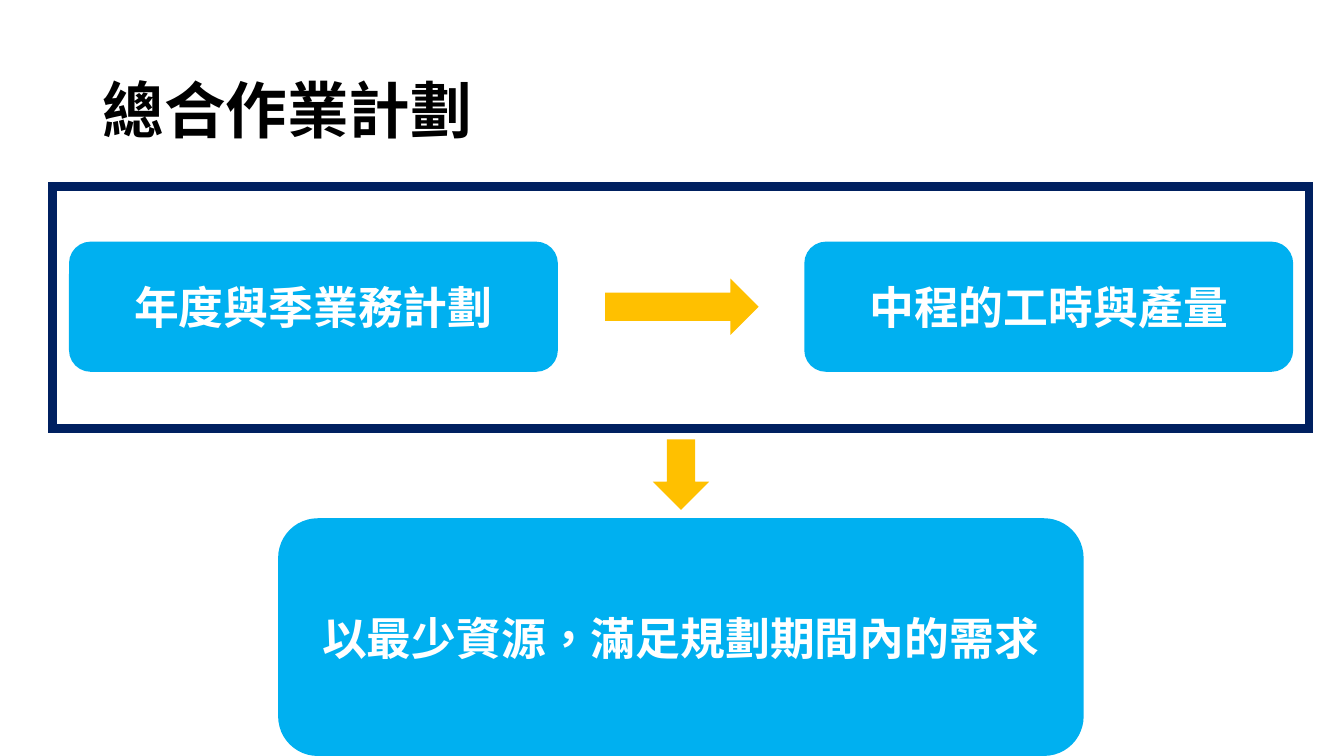
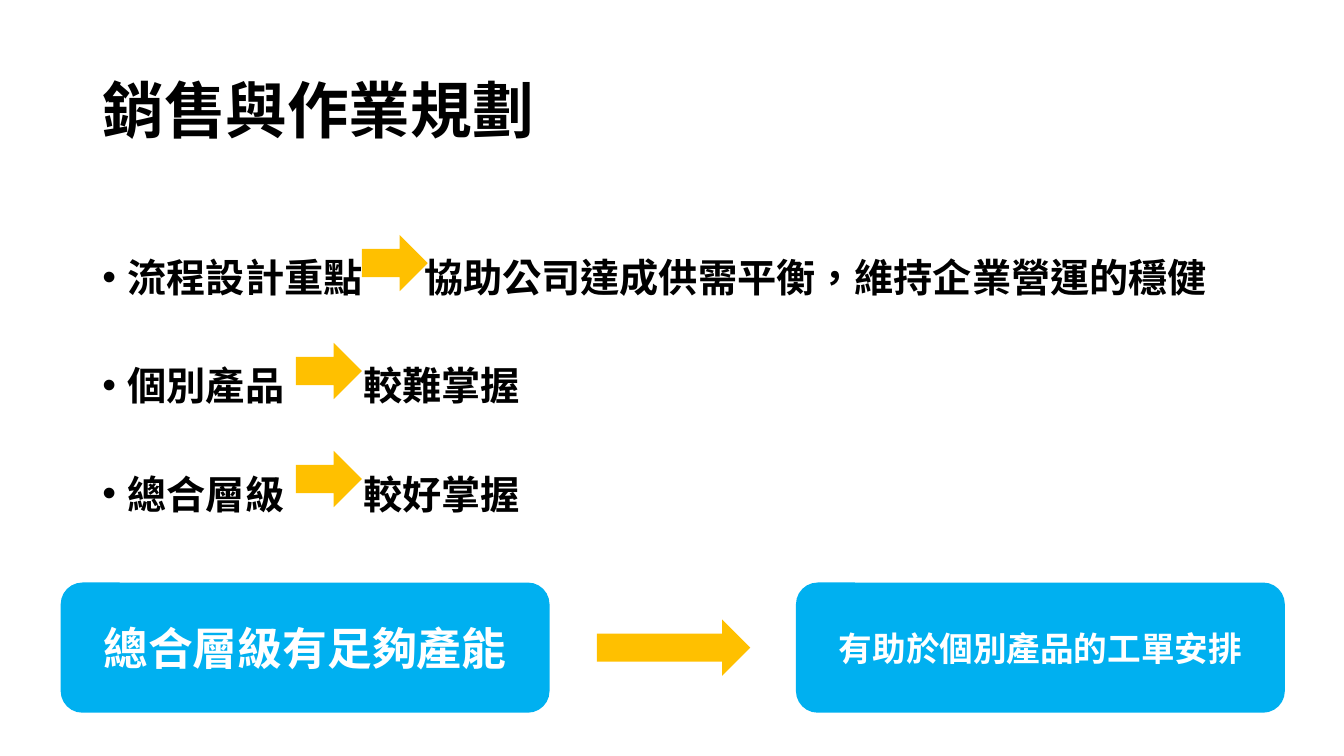
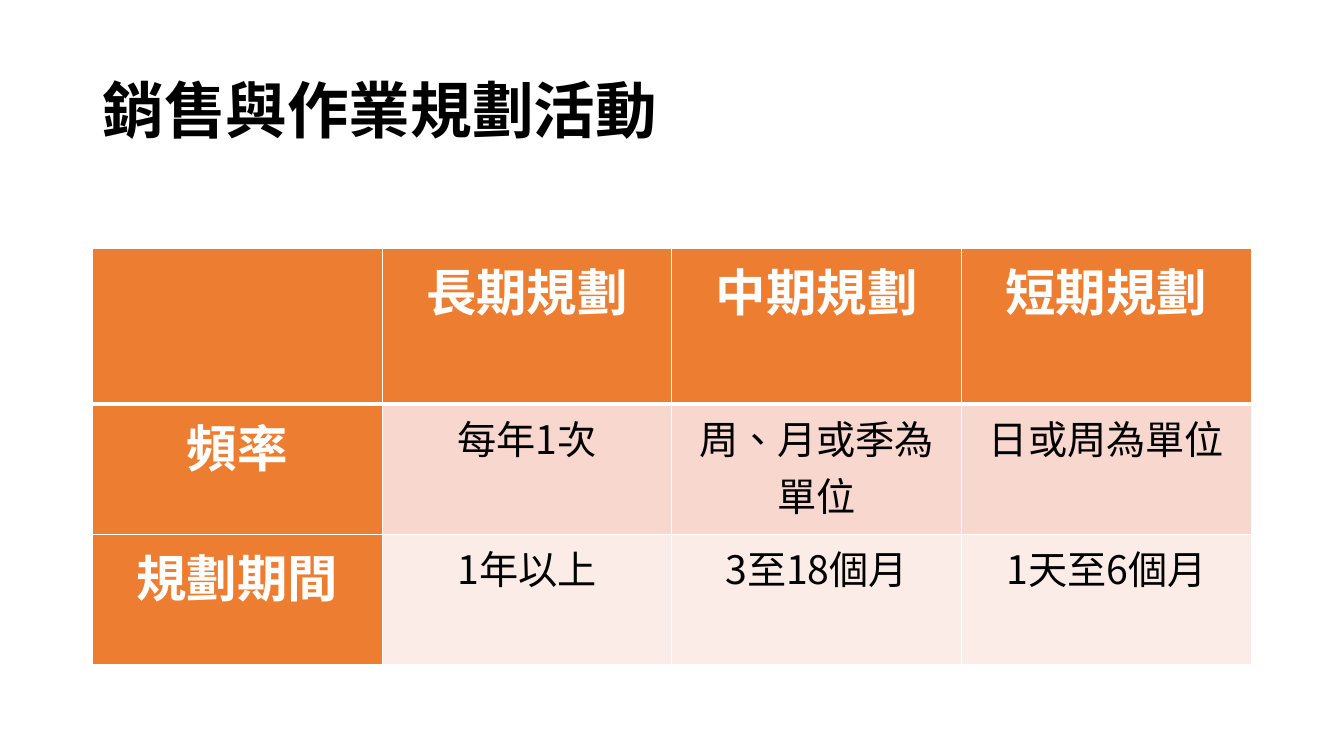
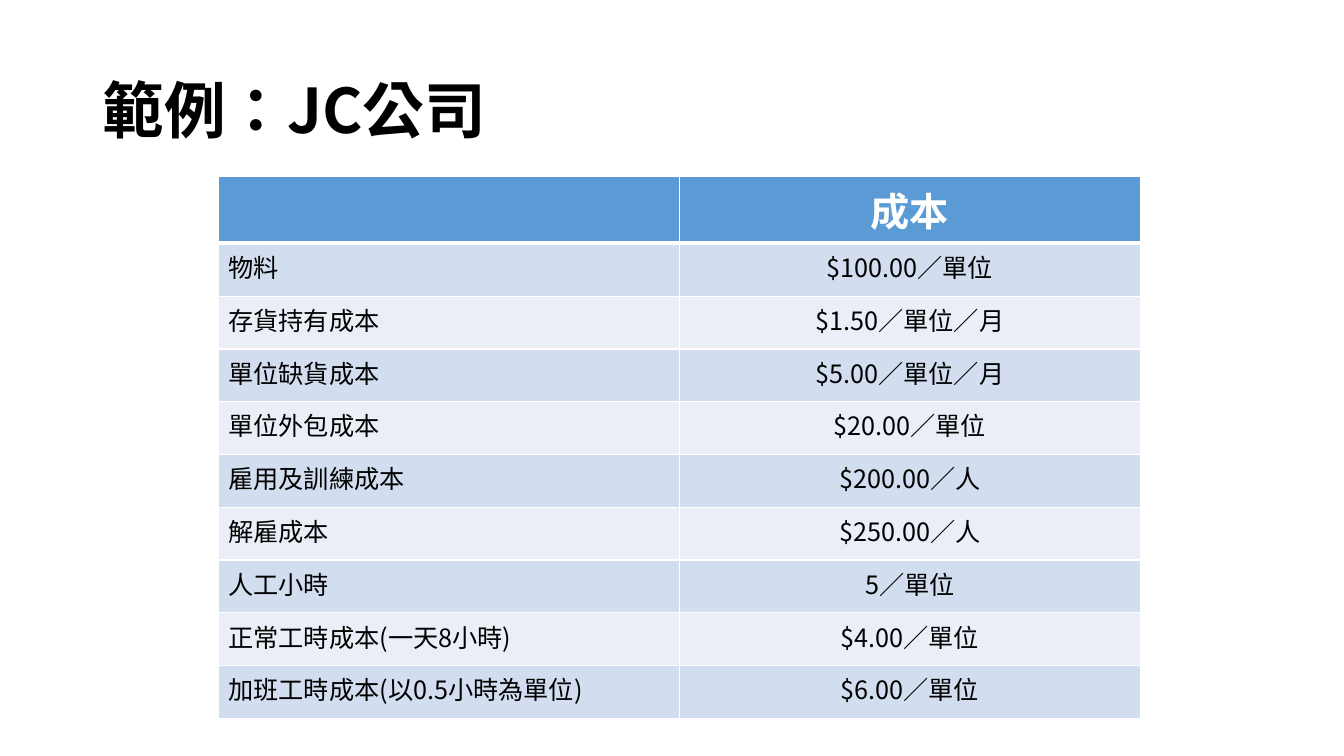
from lxml import etree
from pptx import Presentation
from pptx.dml.color import RGBColor
from pptx.enum.shapes import MSO_SHAPE
from pptx.enum.text import MSO_ANCHOR, PP_ALIGN
from pptx.oxml.ns import qn
from pptx.util import Cm, Pt

ROUNDED, RECTANGLE, ARROW = MSO_SHAPE.ROUNDED_RECTANGLE, MSO_SHAPE.RECTANGLE, MSO_SHAPE.RIGHT_ARROW
LEFT, CENTER = PP_ALIGN.LEFT, PP_ALIGN.CENTER
MIDDLE = MSO_ANCHOR.MIDDLE

FONT = "Noto Sans CJK SC"
COLORS = {
    "text": "000000", "white": "FFFFFF", "box": "00B0F0", "arrow": "FFC000", "frame": "002060",
    "orange": "ED7D31", "orange_dark": "F8D7CE", "orange_light": "FCECE8",
    "blue": "5B9BD5", "blue_dark": "D2DEEF", "blue_light": "EAEFF7",
}
BOX_WIDTH, BOX_HEIGHT, BOX_STEP = 12.32, 3.28, 18.53
ARROW_OFFSET, ARROW_WIDTH, ARROW_HEIGHT = 13.51, 3.87, 1.42
BULLET_PITCH = 2.72

BULLETS = [
    ("流程設計重點", "協助公司達成供需平衡，維持企業營運的穩健", 37.6, 9.12),
    ("個別產品", "較難掌握", 50.2, 7.46),
    ("總合層級", "較好掌握", 50.2, 7.46),
]
PLANNING = [
    ["", "長期規劃", "中期規劃", "短期規劃"],
    ["頻率", "每年1次", "周、月或季為單位", "日或周為單位"],
    ["規劃期間", "1年以上", "3至18個月", "1天至6個月"],
]
COSTS = [
    ["", "成本"],
    ["物料", "$100.00／單位"],
    ["存貨持有成本", "$1.50／單位／月"],
    ["單位缺貨成本", "$5.00／單位／月"],
    ["單位外包成本", "$20.00／單位"],
    ["雇用及訓練成本", "$200.00／人"],
    ["解雇成本", "$250.00／人"],
    ["人工小時", "5／單位"],
    ["正常工時成本(一天8小時)", "$4.00／單位"],
    ["加班工時成本(以0.5小時為單位)", "$6.00／單位"],
]


def rgb(name):
    """Return the named colour."""
    return RGBColor.from_string(COLORS[name])


def style_runs(paragraph, size, color, bold=True, align=LEFT):
    """Format a paragraph's runs for Latin and East Asian text."""
    paragraph.alignment = align
    for run in paragraph.runs:
        run.font.size = Pt(size)
        run.font.bold = bold
        run.font.color.rgb = rgb(color)
        run.font.name = FONT
        properties = run.font._element
        properties.set("lang", "zh-TW")
        etree.SubElement(properties, qn("a:ea"), typeface=FONT)


def add_titled_slide(prs, title):
    """Add a title-only slide and format its title."""
    slide = prs.slides.add_slide(prs.slide_layouts[5])
    heading = slide.shapes.title
    heading.left, heading.top, heading.width, heading.height = Cm(2.33), Cm(1.01), Cm(29.21), Cm(3.68)
    heading.text_frame.text = title
    heading.text_frame.vertical_anchor = MIDDLE
    paragraph = heading.text_frame.paragraphs[0]
    paragraph.line_spacing = 0.9
    style_runs(paragraph, 44, "text")
    return slide


def add_block(slide, kind, left, top, width, height, fill):
    """Add a filled shape without outline or shadow."""
    block = slide.shapes.add_shape(kind, Cm(left), Cm(top), Cm(width), Cm(height))
    block.shadow.inherit = False
    block.fill.solid()
    block.fill.fore_color.rgb = rgb(fill)
    block.line.fill.background()
    return block


def add_box(slide, left, top, text, size=32, width=BOX_WIDTH, height=BOX_HEIGHT):
    """Add a rounded box with centred white text."""
    box = add_block(slide, ROUNDED, left, top, width, height, "box")
    box.text_frame.text = text
    box.text_frame.word_wrap = True
    box.text_frame.vertical_anchor = MIDDLE
    style_runs(box.text_frame.paragraphs[0], size, "white", align=CENTER)


def add_arrow(slide, left, top, width, rotation=0):
    """Add a yellow block arrow."""
    arrow = add_block(slide, ARROW, left, top, width, ARROW_HEIGHT, "arrow")
    arrow.rotation = rotation


def add_flow(slide, left, top, cause, effect, effect_size=32):
    """Add two boxes with an arrow between them."""
    add_box(slide, left, top, cause)
    add_box(slide, left + BOX_STEP, top, effect, effect_size)
    add_arrow(slide, left + ARROW_OFFSET, top + (BOX_HEIGHT - ARROW_HEIGHT) / 2, ARROW_WIDTH)


def add_frame(slide, left, top, width, height):
    """Add an unfilled navy frame with sharp corners."""
    frame = add_block(slide, RECTANGLE, left, top, width, height, "white")
    frame.fill.background()
    frame.line.color.rgb = rgb("frame")
    frame.line.width = Pt(6)
    outline = frame._element.spPr.find(qn("a:ln"))
    etree.SubElement(outline, qn("a:miter"), lim="800000")


def add_bullets(slide):
    """Add bullets whose two parts are joined by an arrow."""
    body = slide.shapes.add_textbox(Cm(2.33), Cm(5.08), Cm(29.21), Cm(12.09)).text_frame
    body.word_wrap = True
    for index, (topic, remark, gap, arrow_left) in enumerate(BULLETS):
        paragraph = body.add_paragraph() if index else body.paragraphs[0]
        properties = paragraph._p.get_or_add_pPr()
        properties.set("marL", str(Cm(0.64)))
        properties.set("indent", str(-Cm(0.64)))
        etree.SubElement(properties, qn("a:buFont"), typeface="Arial")
        etree.SubElement(properties, qn("a:buChar"), char="•")
        paragraph.line_spacing = 2.0
        paragraph.space_before = Pt(10 if index else 0)
        for part in (topic, " ", remark):
            paragraph.add_run().text = part
        style_runs(paragraph, 28, "text")
        paragraph.runs[1].font._element.set("spc", str(round(gap * 100)))
        add_arrow(slide, arrow_left, 5.92 + index * BULLET_PITCH, 1.66)


def set_borders(cell, row):
    """Draw white cell borders, thick below the header."""
    properties = cell._tc.get_or_add_tcPr()
    widths = {"lnL": 1, "lnR": 1, "lnT": 3 if row == 1 else 1, "lnB": 3 if row == 0 else 1}
    for side, width in widths.items():
        line = etree.SubElement(properties, qn(f"a:{side}"), w=str(Pt(width)))
        fill = etree.SubElement(line, qn("a:solidFill"))
        etree.SubElement(fill, qn("a:srgbClr"), val=COLORS["white"])


def add_grid(slide, rows, left, top, col_width, header_height, row_height,
             hue, header_size, body_size, header_column=False):
    """Add a banded table with a coloured header."""
    height = header_height + row_height * (len(rows) - 1)
    table = slide.shapes.add_table(len(rows), len(rows[0]), Cm(left), Cm(top),
                                   Cm(col_width * len(rows[0])), Cm(height)).table
    for column in table.columns:
        column.width = Cm(col_width)
    for r, texts in enumerate(rows):
        table.rows[r].height = Cm(row_height if r else header_height)
        for c, text in enumerate(texts):
            cell = table.cell(r, c)
            is_header = r == 0 or (header_column and c == 0)
            set_borders(cell, r)
            cell.fill.solid()
            band = "_dark" if r % 2 else "_light"
            cell.fill.fore_color.rgb = rgb(hue if is_header else hue + band)
            cell.text_frame.text = text
            style_runs(cell.text_frame.paragraphs[0],
                       header_size if is_header else body_size,
                       "white" if is_header else "text", is_header,
                       CENTER if is_header or c else LEFT)


def main():
    """Build the four slides."""
    prs = Presentation()
    prs.slide_width, prs.slide_height = Cm(33.87), Cm(19.05)

    aggregate = add_titled_slide(prs, "總合作業計劃")
    add_flow(aggregate, 1.74, 6.09, "年度與季業務計劃", "中程的工時與產量")
    add_box(aggregate, 7.01, 13.06, "以最少資源，滿足規劃期間內的需求", width=20.3, height=5.99)
    add_frame(aggregate, 1.32, 4.7, 31.67, 6.1)
    add_arrow(aggregate, 16.27, 11.25, 1.78, rotation=90)

    sales = add_titled_slide(prs, "銷售與作業規劃")
    add_bullets(sales)
    add_flow(sales, 1.53, 14.68, "總合層級有足夠產能", "有助於個別產品的工單安排", 24)

    activities = add_titled_slide(prs, "銷售與作業規劃活動")
    add_grid(activities, PLANNING, 2.33, 6.26, 7.3, 3.92, 3.28, "orange", 36, 28, header_column=True)

    example = add_titled_slide(prs, "範例：JC公司")
    add_grid(example, COSTS, 5.5, 4.45, 11.62, 1.64, 1.33, "blue", 28, 18)

    prs.save("out.pptx")


if __name__ == "__main__":
    main()
